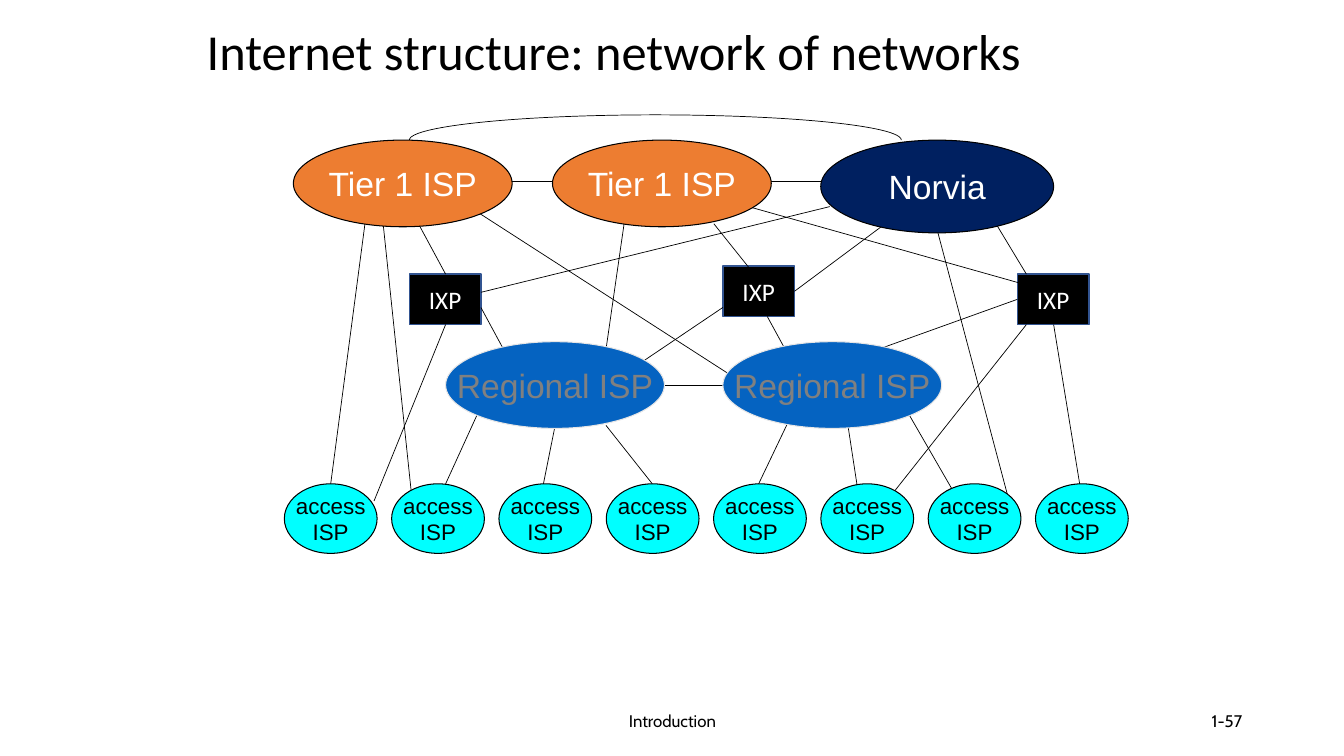
from dataclasses import dataclass

from lxml.etree import SubElement
from pptx import Presentation
from pptx.dml.color import RGBColor
from pptx.enum.shapes import MSO_CONNECTOR, MSO_SHAPE
from pptx.enum.text import MSO_ANCHOR, MSO_AUTO_SIZE, PP_ALIGN
from pptx.oxml.ns import qn
from pptx.util import Inches, Pt


@dataclass(frozen=True)
class Theme:
    black: str = "000000"
    white: str = "FFFFFF"
    orange: str = "ED7D31"
    navy: str = "002060"
    blue: str = "0563C1"
    cyan: str = "00FFFF"
    gray: str = "808080"
    pale: str = "E7E6E6"
    box_line: str = "325491"
    heading_font: str = "Calibri"
    network_font: str = "Arial"
    footer_font: str = "Cabin"
    title_size: float = 36
    network_size: float = 24
    box_size: float = 18
    access_size: float = 16
    footer_size: float = 12
    link_width: float = 0.5
    oval_width: float = 0.75
    box_width: float = 1


THEME = Theme()

TITLE = "Internet structure: network of networks"
FOOTERS = [
    ("Introduction", (4.42, 6.95, 4.5, 0.4), PP_ALIGN.CENTER),
    ("1-57", (9.42, 6.95, 3, 0.4), PP_ALIGN.RIGHT),
]
EXCHANGES = [(4.06, 2.72), (7.17, 2.64), (10.09, 2.72)]
EXCHANGE_SIZE = (0.71, 0.5)

TIER_STYLE = (THEME.orange, THEME.black, THEME.white)
CONTENT_STYLE = (THEME.navy, THEME.black, THEME.white)
REGIONAL_STYLE = (THEME.blue, THEME.pale, THEME.gray)
ACCESS_STYLE = (THEME.cyan, THEME.black, THEME.black)
NETWORKS = [
    ("Tier 1 ISP", (2.91, 1.39, 2.17, 0.86), TIER_STYLE),
    ("Tier 1 ISP", (5.48, 1.39, 2.17, 0.86), TIER_STYLE),
    ("Norvia", (8.14, 1.39, 2.31, 0.92), CONTENT_STYLE),
    ("Regional ISP", (4.42, 3.39, 2.17, 0.86), REGIONAL_STYLE),
    ("Regional ISP", (7.17, 3.39, 2.17, 0.86), REGIONAL_STYLE),
]
ACCESS_LINES = ["access", "ISP"]
ACCESS_COUNT = 8
ACCESS_FIRST, ACCESS_LAST, ACCESS_TOP = 2.82, 10.27, 4.8
ACCESS_SIZE = (0.92, 0.69)

PEERING_ARC = (4.06, 1.14, 4.88, 0.5)
ARC_ANGLES = (106.82, 0)
LINKS = {
    "peering": [
        ((5.62, 1.8), (5.04, 1.8)),
        ((8.19, 1.8), (7.61, 1.8)),
        ((7.17, 3.82), (6.59, 3.82)),
    ],
    "tier 1": [
        ((3.62, 2.22), (3.28, 4.8)),
        ((3.8, 2.22), (4.08, 4.89)),
        ((4.15, 2.22), (4.42, 2.72)),
        ((4.76, 2.12), (7.26, 3.73)),
        ((6.19, 2.22), (6.01, 3.47)),
        ((7.08, 2.22), (7.52, 2.77)),
        ((7.46, 2.06), (10.12, 2.81)),
    ],
    "content": [
        ((8.23, 2.05), (4.77, 2.9)),
        ((8.78, 2.22), (7.88, 2.89)),
        ((9.3, 2.3), (9.99, 4.9)),
        ((9.83, 2.14), (10.18, 2.72)),
    ],
    "exchange": [
        ((4.42, 3.22), (3.71, 4.97)),
        ((4.77, 3.05), (5.04, 3.55)),
        ((7.17, 3.05), (6.28, 3.65)),
        ((7.61, 3.14), (7.79, 3.47)),
        ((10.09, 2.97), (8.67, 3.48)),
        ((10.18, 3.22), (8.85, 4.9)),
        ((10.45, 3.22), (10.71, 4.81)),
    ],
    "regional": [
        ((4.73, 4.12), (4.42, 4.8)),
        ((5.5, 4.25), (5.39, 4.8)),
        ((6.01, 4.22), (6.47, 4.8)),
        ((7.84, 4.14), (7.52, 4.81)),
        ((8.41, 4.22), (8.5, 4.81)),
        ((9.02, 4.12), (9.47, 4.9)),
    ],
}


def inches(values):
    return [Inches(value) for value in values]


def write(shape, lines, font, size, color, align, wrap=True):
    frame = shape.text_frame
    frame.word_wrap = wrap
    frame.auto_size = MSO_AUTO_SIZE.NONE
    frame.vertical_anchor = MSO_ANCHOR.MIDDLE
    for index, line in enumerate(lines):
        paragraph = frame.add_paragraph() if index else frame.paragraphs[0]
        paragraph.alignment = align
        run = paragraph.add_run()
        run.text = line
        run.font.name = font
        run.font.size = Pt(size)
        run.font.color.rgb = RGBColor.from_string(color)


def set_line(shape, color, width):
    shape.line.color.rgb = RGBColor.from_string(color)
    shape.line.width = Pt(width)


def add_node(slide, kind, box, fill, line, width):
    shape = slide.shapes.add_shape(kind, *inches(box))
    shape.shadow.inherit = False
    shape.fill.solid()
    shape.fill.fore_color.rgb = RGBColor.from_string(fill)
    set_line(shape, line, width)
    return shape


def add_oval(slide, lines, box, style, size):
    fill, line, color = style
    oval = add_node(slide, MSO_SHAPE.OVAL, box, fill, line, THEME.oval_width)
    write(oval, lines, THEME.network_font, size, color, PP_ALIGN.CENTER, wrap=False)


def add_link(slide, start, end):
    link = slide.shapes.add_connector(MSO_CONNECTOR.STRAIGHT, *inches(start + end))
    set_line(link, THEME.black, THEME.link_width)
    SubElement(link._element.spPr, qn("a:effectLst"))


def add_arc(slide):
    arc = slide.shapes.add_shape(MSO_SHAPE.ARC, *inches(PEERING_ARC))
    arc.shadow.inherit = False
    arc.fill.background()
    set_line(arc, THEME.black, THEME.link_width)
    for index, angle in enumerate(ARC_ANGLES):
        arc.adjustments[index] = angle


def main():
    presentation = Presentation()
    presentation.slide_width, presentation.slide_height = inches((13.33, 7.5))
    slide = presentation.slides.add_slide(presentation.slide_layouts[5])

    title = slide.shapes.title
    title.left, title.top, title.width, title.height = inches((1.95, 0.18, 8.85, 0.71))
    write(title, [TITLE], THEME.heading_font, THEME.title_size, THEME.black, PP_ALIGN.LEFT)
    title.text_frame.paragraphs[0].line_spacing = 0.9

    for text, box, align in FOOTERS:
        footer = slide.shapes.add_textbox(*inches(box))
        write(footer, [text], THEME.footer_font, THEME.footer_size, THEME.black, align)

    for corner in EXCHANGES:
        exchange = add_node(slide, MSO_SHAPE.RECTANGLE, corner + EXCHANGE_SIZE,
                            THEME.black, THEME.box_line, THEME.box_width)
        write(exchange, ["IXP"], THEME.heading_font, THEME.box_size, THEME.white, PP_ALIGN.CENTER)

    for links in LINKS.values():
        for start, end in links:
            add_link(slide, start, end)
    add_arc(slide)

    for name, box, style in NETWORKS:
        add_oval(slide, [name], box, style, THEME.network_size)

    access_step = (ACCESS_LAST - ACCESS_FIRST) / (ACCESS_COUNT - 1)
    for index in range(ACCESS_COUNT):
        corner = (ACCESS_FIRST + index * access_step, ACCESS_TOP)
        add_oval(slide, ACCESS_LINES, corner + ACCESS_SIZE, ACCESS_STYLE, THEME.access_size)

    presentation.save("out.pptx")


if __name__ == "__main__":
    main()
